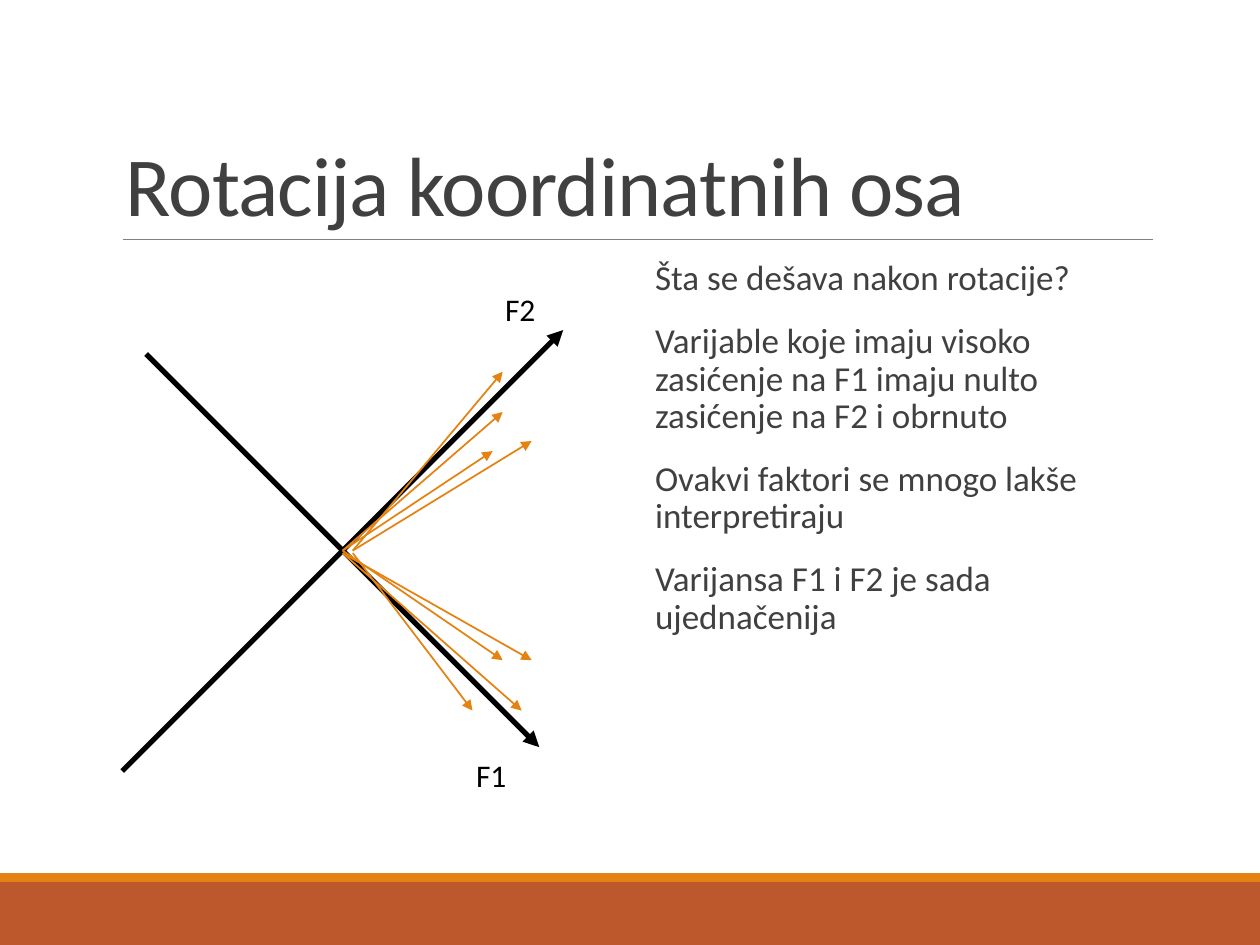
"""Build a slide about rotating the coordinate axes in factor analysis."""
from lxml.etree import SubElement
from pptx import Presentation
from pptx.dml.color import RGBColor
from pptx.enum.shapes import MSO_CONNECTOR as Connector, MSO_SHAPE as Shape
from pptx.enum.text import MSO_ANCHOR as Anchor
from pptx.oxml.ns import qn
from pptx.util import Inches, Pt

COLORS = {"rust": "BD582C", "orange": "E48312", "rule": "808080",
          "text": "404040", "black": "000000"}
FONT = "Calibri"
TITLE = "Rotacija koordinatnih osa"
BODY = [
    "Šta se dešava nakon rotacije?",
    "Varijable koje imaju visoko zasićenje na F1 imaju nulto zasićenje na F2 i obrnuto",
    "Ovakvi faktori se mnogo lakše interpretiraju",
    "Varijansa F1 i F2 je sada ujednačenija",
]
BANDS = [("rust", 7, 0.5), ("orange", 6.93, 0.07)]
AXES = [((1.16, 2.81), (4.28, 5.93)), ((0.97, 6.12), (4.47, 2.62))]
VARIABLES = [
    ((2.72, 4.37), (3.91, 3.58)),
    ((2.72, 4.37), (3.99, 3.27)),
    ((2.72, 4.39), (4.22, 5.24)),
    ((2.8, 4.37), (4.22, 3.5)),
    ((2.72, 4.37), (3.99, 5.24)),
    ((2.8, 4.39), (3.75, 5.64)),
    ((2.8, 4.37), (3.99, 2.95)),
    ((2.72, 4.39), (4.14, 5.64)),
]
AXIS_LABELS = [("F1", 3.68, 5.95), ("F2", 3.91, 2.25)]


def rgb(name):
    return RGBColor.from_string(COLORS[name])


def add_band(slide, color, top, height):
    band = slide.shapes.add_shape(
        Shape.RECTANGLE, 0, Inches(top), Inches(10), Inches(height))
    band.shadow.inherit = False
    band.fill.solid()
    band.fill.fore_color.rgb = rgb(color)
    band.line.fill.background()


def add_line(slide, start, end, color, width, arrow=True):
    line = slide.shapes.add_connector(
        Connector.STRAIGHT, *(Inches(value) for value in (*start, *end)))
    line.line.color.rgb = rgb(color)
    line.line.width = Pt(width)
    if arrow:
        SubElement(line.line._get_or_add_ln(), qn("a:tailEnd"), type="triangle")
    SubElement(line._element.spPr, qn("a:effectLst"))


def add_text(slide, box, texts, size, color, wrap=True, anchor=Anchor.TOP,
             line_spacing=1.0, before=0, after=0, tracking=None):
    frame = slide.shapes.add_textbox(*(Inches(value) for value in box)).text_frame
    frame.word_wrap = wrap
    frame.vertical_anchor = anchor
    for index, text in enumerate(texts):
        paragraph = frame.add_paragraph() if index else frame.paragraphs[0]
        paragraph.line_spacing = line_spacing
        paragraph.space_before = Pt(before)
        paragraph.space_after = Pt(after)
        run = paragraph.add_run()
        run.text = text
        run.font.name = FONT
        run.font.size = Pt(size)
        run.font.color.rgb = rgb(color)
        if tracking is not None:
            run.font._element.set("spc", str(tracking))


def main():
    presentation = Presentation()
    presentation.slide_width, presentation.slide_height = Inches(10), Inches(7.5)
    slide = presentation.slides.add_slide(presentation.slide_layouts[6])

    for band in BANDS:
        add_band(slide, *band)
    add_line(slide, (0.98, 1.9), (9.15, 1.9), "rule", 0.5, arrow=False)
    add_text(slide, (0.9, 0.31, 8.25, 1.59), [TITLE], 48, "text",
             anchor=Anchor.BOTTOM, line_spacing=0.85, tracking=-50)
    add_text(slide, (5.1, 2.02, 4.05, 4.4), BODY, 20, "text",
             line_spacing=0.9, before=12, after=2)
    for start, end in AXES:
        add_line(slide, start, end, "black", 3)
    for start, end in VARIABLES:
        add_line(slide, start, end, "orange", 1)
    for label, left, top in AXIS_LABELS:
        add_text(slide, (left, top, 0.45, 0.4), [label], 18, "black", wrap=False)

    presentation.save("out.pptx")


if __name__ == "__main__":
    main()
